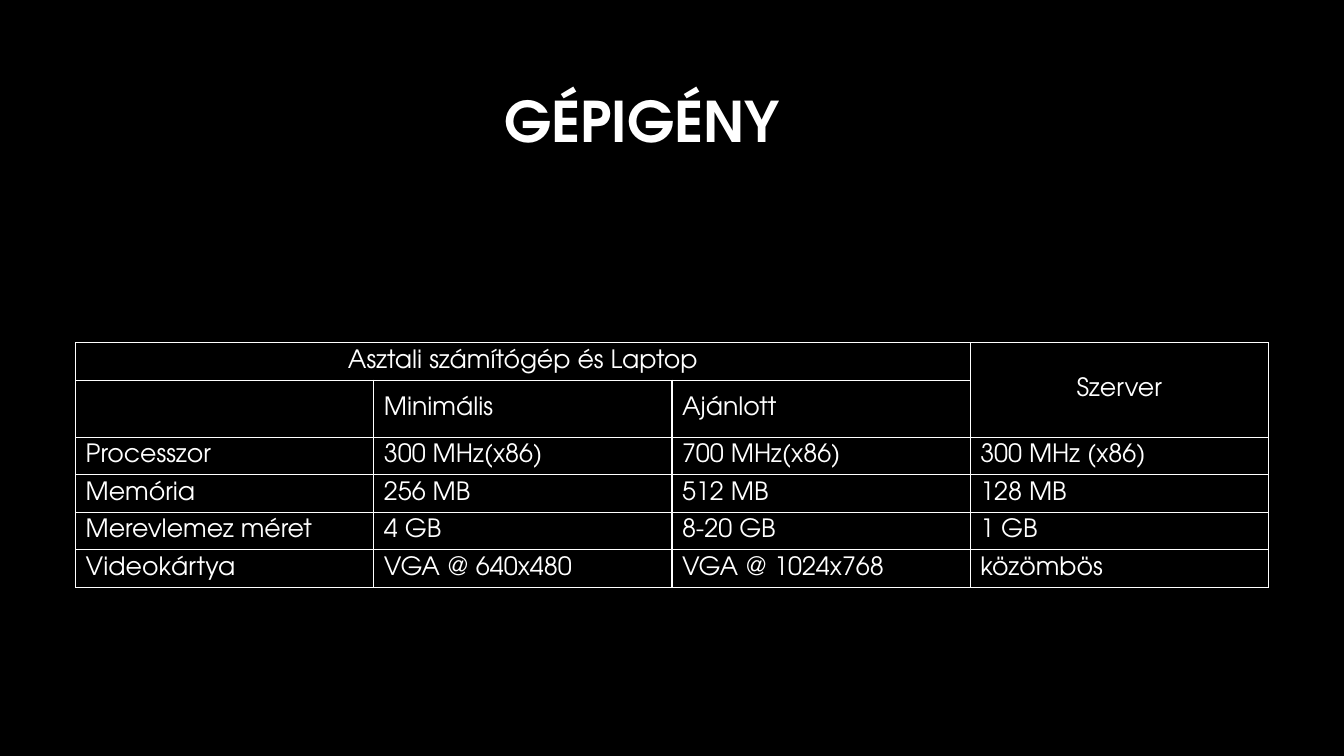
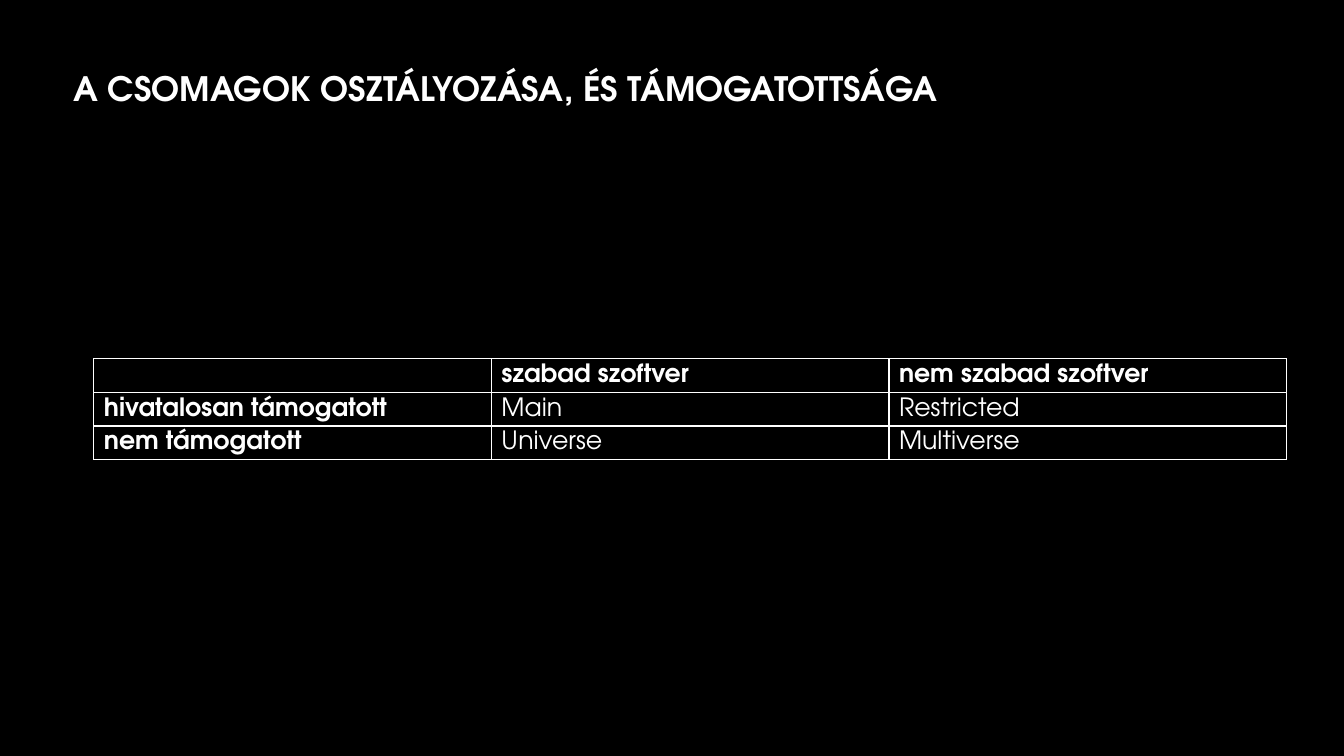
import dataclasses

import lxml.etree
import pptx
import pptx.dml.color
import pptx.enum.text
import pptx.oxml.ns
import pptx.util

Pt = pptx.util.Pt
CENTER = pptx.enum.text.PP_ALIGN.CENTER
LEFT = pptx.enum.text.PP_ALIGN.LEFT
MIDDLE = pptx.enum.text.MSO_ANCHOR.MIDDLE


@dataclasses.dataclass(frozen=True)
class Theme:
    ground: str = "000000"
    ink: str = "FFFFFF"
    font: str = "TeX Gyre Adventor"
    large_title: int = 40
    small_title: int = 24
    cell_text: int = 18
    border: int = 1


THEME = Theme()
SLIDE_SIZE = (960, 540)
TITLE_SIZE = (678, 101.5)
TABLE_WIDTH = 852

REQUIREMENTS = [
    ["Asztali számítógép és Laptop", "", "", "Szerver"],
    ["", "Minimális", "Ajánlott", ""],
    ["Processzor", "300 MHz(x86)", "700 MHz(x86)", "300 MHz (x86)"],
    ["Memória", "256 MB", "512 MB", "128 MB"],
    ["Merevlemez méret", "4 GB", "8-20 GB", "1 GB"],
    ["Videokártya", "VGA @ 640x480", "VGA @ 1024x768", "közömbös"],
]
PACKAGES = [
    ["", "szabad szoftver", "nem szabad szoftver"],
    ["hivatalosan támogatott", "Main", "Restricted"],
    ["nem támogatott", "Universe", "Multiverse"],
]


def format_paragraph(para, size, bold=False, align=LEFT):
    para.alignment = align
    font = para.font
    font.name = THEME.font
    font.size = Pt(size)
    font.bold = bold
    font.color.rgb = pptx.dml.color.RGBColor.from_string(THEME.ink)


def add_titled_page(deck, title, left, top, size, align):
    page = deck.slides.add_slide(deck.slide_layouts.get_by_name("Title Only"))
    box = page.shapes.title
    box.left, box.top = Pt(left), Pt(top)
    box.width, box.height = (Pt(length) for length in TITLE_SIZE)
    frame = box.text_frame
    frame.text = title
    frame.word_wrap = True
    frame.vertical_anchor = MIDDLE
    para = frame.paragraphs[0]
    para.line_spacing = 0.9
    format_paragraph(para, size, True, align)
    return page


def draw_borders(cell):
    """Outline all four sides; the line elements must precede the cell fill."""
    properties = cell._tc.get_or_add_tcPr()
    for index, side in enumerate(("lnL", "lnR", "lnT", "lnB")):
        line = lxml.etree.Element(
            pptx.oxml.ns.qn(f"a:{side}"), w=str(Pt(THEME.border)))
        fill = lxml.etree.SubElement(line, pptx.oxml.ns.qn("a:solidFill"))
        lxml.etree.SubElement(
            fill, pptx.oxml.ns.qn("a:srgbClr"), val=THEME.ink)
        properties.insert(index, line)


def add_grid(page, left, top, row_heights, texts, bold_headers=False):
    """Add an outlined table with equal columns."""
    column_count = len(texts[0])
    table = page.shapes.add_table(
        len(texts), column_count, Pt(left), Pt(top),
        Pt(TABLE_WIDTH), Pt(sum(row_heights))).table
    table.first_row = table.horz_banding = False
    for column in table.columns:
        column.width = Pt(TABLE_WIDTH / column_count)
    for row, height in zip(table.rows, row_heights):
        row.height = Pt(height)
    for row_index, row_texts in enumerate(texts):
        for column_index, text in enumerate(row_texts):
            cell = table.cell(row_index, column_index)
            cell.text = text
            cell.margin_top = cell.margin_bottom = 0
            cell.vertical_anchor = MIDDLE
            cell.fill.background()
            draw_borders(cell)
            is_header = row_index == 0 or column_index == 0
            format_paragraph(cell.text_frame.paragraphs[0], THEME.cell_text,
                             bold_headers and is_header)
    return table


def add_requirements_page(deck):
    page = add_titled_page(
        deck, "GÉPIGÉNY", 119.5, 38, THEME.large_title, CENTER)
    row_heights = [26.8, 40.7] + [26.8] * 4
    table = add_grid(page, 54, 244.8, row_heights, REQUIREMENTS)
    for first, last in (((0, 0), (0, 2)), ((0, 3), (1, 3))):
        heading = table.cell(*first)
        heading.merge(table.cell(*last))
        heading.text_frame.paragraphs[0].alignment = CENTER


def add_packages_page(deck):
    page = add_titled_page(
        deck, "A CSOMAGOK OSZTÁLYOZÁSA, ÉS TÁMOGATOTTSÁGA",
        45.4, 13.7, THEME.small_title, LEFT)
    add_grid(page, 67, 256.3, [24] * 3, PACKAGES, bold_headers=True)


def main():
    deck = pptx.Presentation()
    deck.slide_width, deck.slide_height = (Pt(length) for length in SLIDE_SIZE)
    ground = deck.slide_master.background.fill
    ground.solid()
    ground.fore_color.rgb = pptx.dml.color.RGBColor.from_string(THEME.ground)
    add_requirements_page(deck)
    add_packages_page(deck)
    deck.save("out.pptx")


if __name__ == "__main__":
    main()
